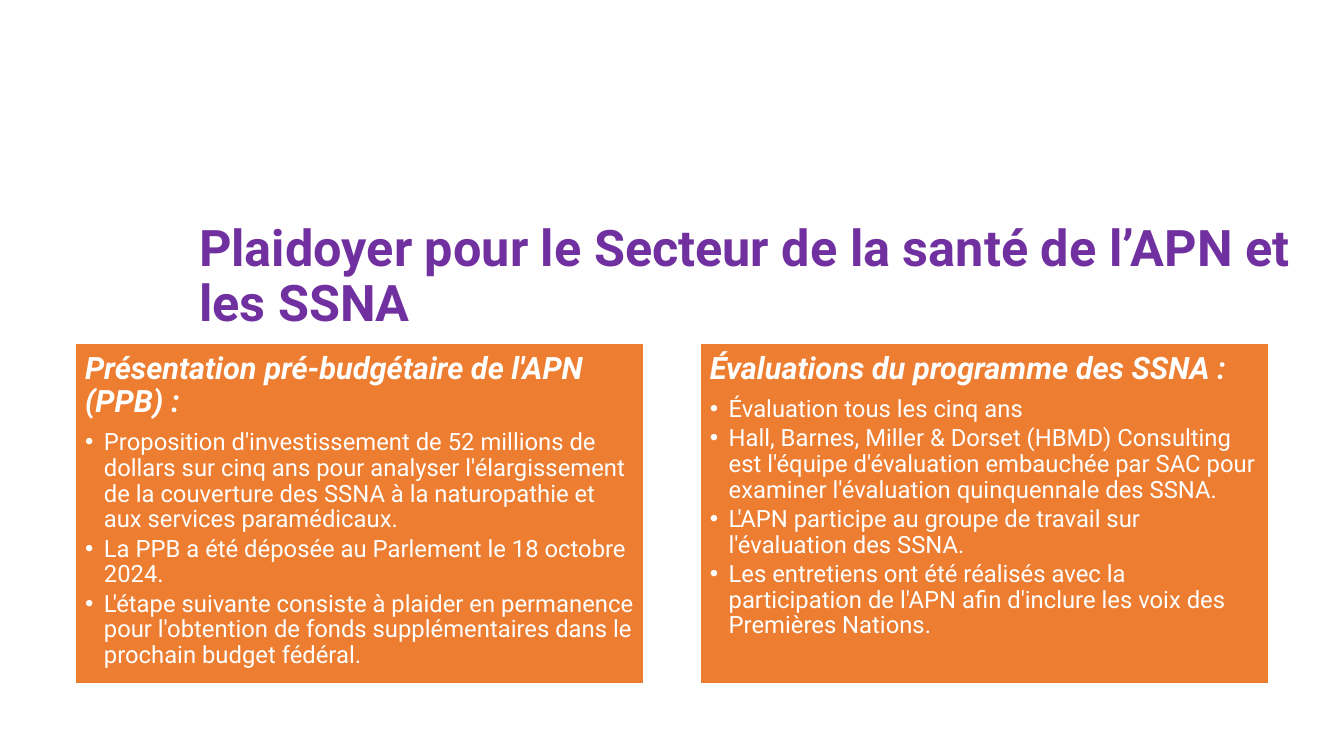
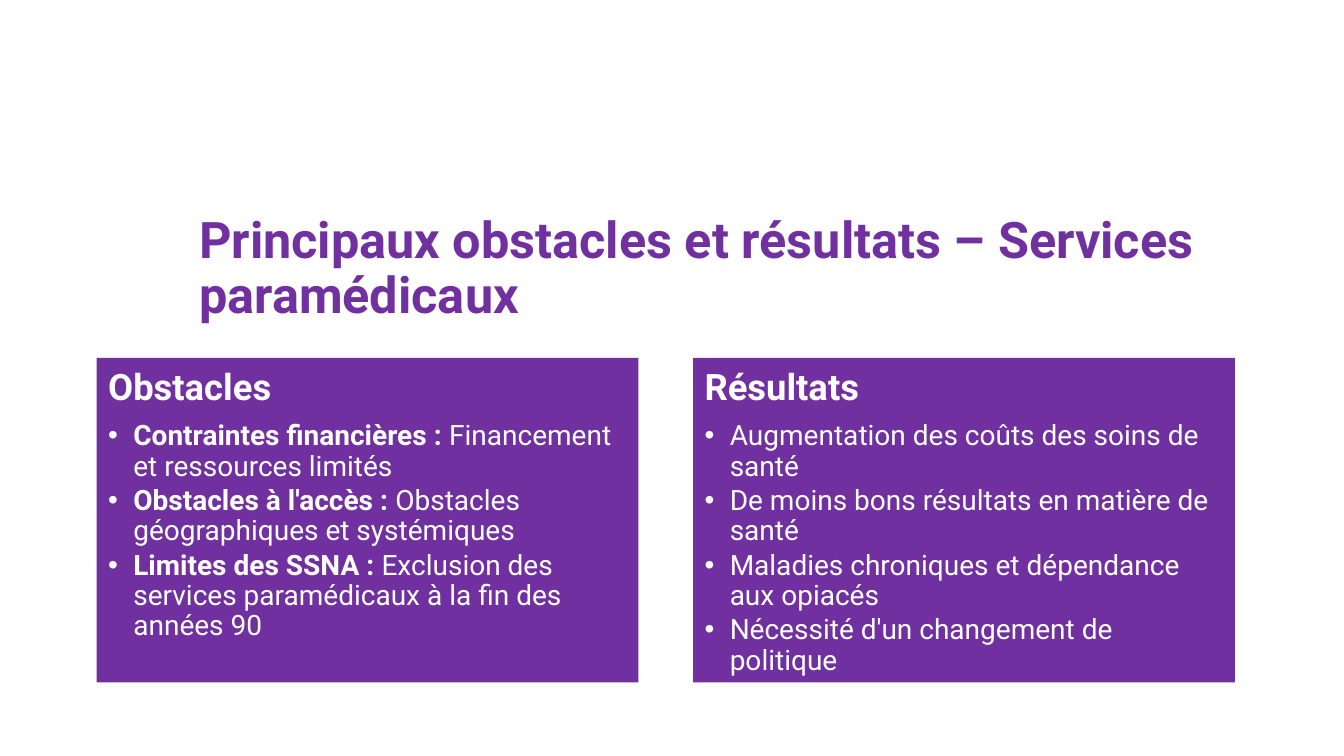
from lxml.etree import SubElement
from pptx import Presentation
from pptx.dml.color import RGBColor
from pptx.enum.shapes import MSO_SHAPE
from pptx.enum.text import MSO_ANCHOR, MSO_AUTO_SIZE, PP_ALIGN
from pptx.oxml.ns import qn
from pptx.util import Emu, Pt

PURPLE = RGBColor(0x70, 0x30, 0xA0)
ORANGE = RGBColor(0xED, 0x7D, 0x31)
WHITE = RGBColor(0xFF, 0xFF, 0xFF)
FONT = "Roboto"
TITLE_ONLY = 5


def px(length):
    """One pixel is 1/96 inch."""
    return Emu(length * 9525)


class Deck:
    """Shared style and the slide being filled."""

    def __init__(self):
        self.prs = Presentation()
        self.prs.slide_width, self.prs.slide_height = px(1280), px(720)
        self.slide = None

    def add_slide(self, title, top, width, height):
        self.slide = self.prs.slides.add_slide(self.prs.slide_layouts[TITLE_ONLY])
        heading = self.slide.shapes.title
        heading.left, heading.top = px(180), px(top)
        heading.width, heading.height = px(width), px(height)
        frame = heading.text_frame
        frame.word_wrap = True
        frame.auto_size = MSO_AUTO_SIZE.NONE
        frame.vertical_anchor = MSO_ANCHOR.TOP
        frame.text = title
        self.style(frame.paragraphs[0], 36, PURPLE, bold=True)

    def style(self, paragraph, size, color, bold=False, italic=False, after=0.0):
        """Format a paragraph; the space after is a share of the text size."""
        paragraph.alignment = PP_ALIGN.LEFT
        paragraph.line_spacing = 0.9
        paragraph.space_before = Pt(0)
        paragraph.space_after = Pt(size * after)
        font = paragraph.font
        font.name, font.size = FONT, Pt(size)
        font.bold, font.italic = bold, italic
        font.color.rgb = color

    def bullet(self, frame, lead, text, size, indent):
        item = frame.add_paragraph()
        if lead:
            lead_run = item.add_run()
            lead_run.text = lead
            lead_run.font.bold = True
        item.add_run().text = text
        props = item._p.get_or_add_pPr()
        props.set("marL", str(px(indent)))
        props.set("indent", str(-px(indent)))
        SubElement(props, qn("a:buFont"), typeface="Arial")
        SubElement(props, qn("a:buChar"), char="•")
        self.style(item, size, WHITE, after=0.15)

    def panel(self, box, heading, items, fill, sizes, inset, indent,
              italic=False, outlined=False):
        panel = self.slide.shapes.add_shape(MSO_SHAPE.RECTANGLE, *map(px, box))
        panel.shadow.inherit = False
        panel.fill.solid()
        panel.fill.fore_color.rgb = fill
        if outlined:
            panel.line.color.rgb = WHITE
            panel.line.width = Pt(1)
        else:
            panel.line.fill.background()

        frame = panel.text_frame
        frame.word_wrap = True
        frame.vertical_anchor = MSO_ANCHOR.TOP
        frame.margin_left = frame.margin_right = px(inset)
        frame.margin_top = frame.margin_bottom = px(inset)
        frame.text = heading
        heading_size, item_size = sizes
        self.style(frame.paragraphs[0], heading_size, WHITE, bold=True,
                   italic=italic, after=0.35)
        for lead, text in items:
            self.bullet(frame, lead, text, item_size, indent)

    def panel_pair(self, left, top, width, height, gap, columns, **look):
        """Place equal panels side by side."""
        for index, (heading, items) in enumerate(columns):
            box = (left + index * (width + gap), top, width, height)
            self.panel(box, heading, items, **look)


ADVOCACY = [
    ("Présentation pré-budgétaire de l'APN (PPB) :", [
        ("", "Proposition d'investissement de 52 millions de dollars sur cinq ans "
             "pour analyser l'élargissement de la couverture des SSNA à la "
             "naturopathie et aux services paramédicaux."),
        ("", "La PPB a été déposée au Parlement le 18 octobre 2024."),
        ("", "L'étape suivante consiste à plaider en permanence pour l'obtention "
             "de fonds supplémentaires dans le prochain budget fédéral."),
    ]),
    ("Évaluations du programme des SSNA :", [
        ("", "Évaluation tous les cinq ans"),
        ("", "Hall, Barnes, Miller & Dorset (HBMD) Consulting est l'équipe "
             "d'évaluation embauchée par SAC pour examiner l'évaluation "
             "quinquennale des SSNA."),
        ("", "L'APN participe au groupe de travail sur l'évaluation des SSNA."),
        ("", "Les entretiens ont été réalisés avec la participation de l'APN afin "
             "d'inclure les voix des Premières Nations."),
    ]),
]

BARRIERS_AND_OUTCOMES = [
    ("Obstacles", [
        ("Contraintes financières : ", "Financement et ressources limités"),
        ("Obstacles à l'accès : ", "Obstacles géographiques et systémiques"),
        ("Limites des SSNA : ",
         "Exclusion des services paramédicaux à la fin des années 90"),
    ]),
    ("Résultats", [
        ("", "Augmentation des coûts des soins de santé"),
        ("", "De moins bons résultats en matière de santé"),
        ("", "Maladies chroniques et dépendance aux opiacés"),
        ("", "Nécessité d'un changement de politique"),
    ]),
]


def main():
    deck = Deck()

    # Advocacy
    deck.add_slide("Plaidoyer pour le Secteur de la santé de l’APN et les SSNA",
                   top=208, width=1083, height=119)
    deck.panel_pair(72, 327, 541, 324, 54, ADVOCACY, fill=ORANGE, sizes=(22, 17),
                    inset=9, indent=18, italic=True, outlined=True)

    # Barriers and outcomes
    deck.add_slide("Principaux obstacles et résultats – Services paramédicaux",
                   top=200, width=1051, height=60)
    deck.panel_pair(92, 341, 516, 309, 52, BARRIERS_AND_OUTCOMES, fill=PURPLE,
                    sizes=(26, 20), inset=11, indent=24)

    deck.prs.save("out.pptx")


if __name__ == "__main__":
    main()
